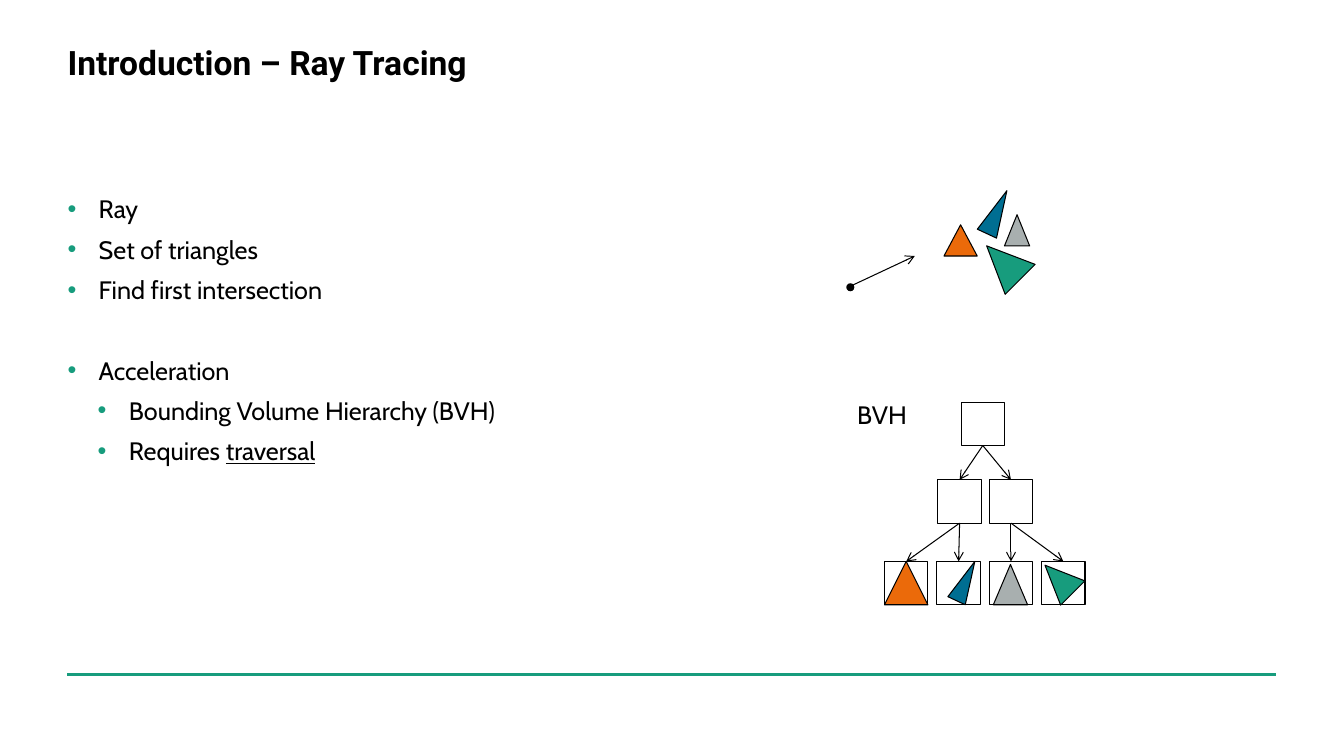
from lxml import etree
from pptx import Presentation
from pptx import util as u
from pptx.dml.color import RGBColor
from pptx.enum import shapes, text
from pptx.oxml.ns import qn

PX = 9144  # 100 px to the inch
COLORS = {
    "black": "000000",
    "green": "179C7D",
    "orange": "EB6A0A",
    "blue": "006E92",
    "gray": "A8AFAF",
}
SHAPE = shapes.MSO_SHAPE
NODE = 43

# left, top, width, height, rotation, colour
SCENE_TRIANGLES = [
    (937, 223, 33, 31, 0, "orange"),
    (979, 187, 21, 47, 25, "blue"),
    (997, 213, 25, 31, 0, "gray"),
    (975, 237, 42, 47, 315, "green"),
]
LEAF_TRIANGLES = [
    (878, 557, 43, 43, 0, "orange"),
    (949, 555, 19, 43, 25, "blue"),
    (986, 560, 34, 40, 0, "gray"),
    (1034, 555, 34, 39, 315, "green"),
]
# top and lefts of each tree level, root first
TREE_LEVELS = [
    (399, [954]),
    (476, [931, 982]),
    (557, [878 + 52 * leaf for leaf in range(4)]),
]
# wording, indent level, underlined ending, space before in points
POINTS = [
    ("Ray", 0, "", 0),
    ("Set of triangles", 0, "", 0),
    ("Find first intersection", 0, "", 0),
    ("Acceleration", 0, "", 28.8),
    ("Bounding Volume Hierarchy (BVH)", 1, "", 0),
    ("Requires ", 1, "traversal", 0),
]


def px(*lengths):
    return [u.Emu(length * PX) for length in lengths]


def rgb(name):
    return RGBColor.from_string(COLORS[name])


def write(paragraph, wording, size=18, font="Cabin", color="black", bold=False, underline=False):
    """Append one formatted run to the paragraph."""
    run = paragraph.add_run()
    run.text = wording
    run.font.size = u.Pt(size)
    run.font.name = font
    run.font.bold = bold
    run.font.underline = underline
    run.font.color.rgb = rgb(color)


def clear_margins(frame):
    frame.margin_left = frame.margin_right = frame.margin_top = frame.margin_bottom = 0


def add_title(slide, wording):
    title = slide.shapes.title
    title.left, title.top, title.width, title.height = px(67, 42, 1199, 40)
    frame = title.text_frame
    clear_margins(frame)
    frame.vertical_anchor = text.MSO_ANCHOR.TOP
    frame.paragraphs[0].alignment = text.PP_ALIGN.LEFT
    write(frame.paragraphs[0], wording, size=24, font="Roboto", bold=True)


def add_bullet(paragraph, level):
    props = paragraph._p.get_or_add_pPr()
    props.set("marL", str((31 + 30 * level) * PX))
    props.set("indent", str(-31 * PX))
    color = etree.SubElement(props, qn("a:buClr"))
    etree.SubElement(color, qn("a:srgbClr"), val=COLORS["green"])
    etree.SubElement(props, qn("a:buFont"), typeface="Arial")
    etree.SubElement(props, qn("a:buChar"), char="•")


def add_points(slide):
    frame = slide.shapes.add_textbox(*px(67, 192, 1199, 285)).text_frame
    frame.word_wrap = True
    clear_margins(frame)
    for index, (wording, level, underlined, before) in enumerate(POINTS):
        paragraph = frame.add_paragraph() if index else frame.paragraphs[0]
        paragraph.level = level
        add_bullet(paragraph, level)
        paragraph.space_after = u.Pt(7.2)
        if before:
            paragraph.space_before = u.Pt(before)
        write(paragraph, wording)
        if underlined:
            write(paragraph, underlined, underline=True)


def add_label(slide, wording, *box):
    frame = slide.shapes.add_textbox(*px(*box)).text_frame
    frame.word_wrap = False
    write(frame.paragraphs[0], wording)


def add_outlined(slide, kind, left, top, width, height, rotation=0, fill=None):
    shape = slide.shapes.add_shape(kind, *px(left, top, width, height))
    shape.shadow.inherit = False
    shape.rotation = rotation
    if fill:
        shape.fill.solid()
        shape.fill.fore_color.rgb = rgb(fill)
    else:
        shape.fill.background()
    shape.line.color.rgb = rgb("black")
    shape.line.width = u.Pt(0.75)
    return shape


def add_line(slide, *ends, color="black", width=0.75, arrow=True):
    line = slide.shapes.add_connector(shapes.MSO_CONNECTOR.STRAIGHT, *px(*ends))
    line.line.color.rgb = rgb(color)
    line.line.width = u.Pt(width)
    if arrow:
        etree.SubElement(line.line._get_or_add_ln(), qn("a:tailEnd"), type="arrow")
    etree.SubElement(line._element.spPr, qn("a:effectLst"))
    return line


def add_scene(slide):
    origin = add_outlined(slide, SHAPE.OVAL, 840, 281, 8, 8, fill="black")
    origin.line.fill.background()
    add_line(slide, 844, 284, 908, 254)
    for triangle in SCENE_TRIANGLES:
        add_outlined(slide, SHAPE.ISOSCELES_TRIANGLE, *triangle)


def add_hierarchy(slide):
    """Draw a binary tree whose node i has parent (i - 1) // 2."""
    nodes = [
        add_outlined(slide, SHAPE.RECTANGLE, left, top, NODE, NODE)
        for top, lefts in TREE_LEVELS
        for left in lefts
    ]
    for triangle in LEAF_TRIANGLES:
        add_outlined(slide, SHAPE.ISOSCELES_TRIANGLE, *triangle)
    for index, child in enumerate(nodes[1:], start=1):
        edge = add_line(slide, 0, 0, 0, 0)
        edge.begin_connect(nodes[(index - 1) // 2], 2)
        edge.end_connect(child, 0)
    add_label(slide, "BVH", 841, 391, 72, 40)


def main():
    deck = Presentation()
    deck.slide_width, deck.slide_height = px(1334, 750)
    slide = deck.slides.add_slide(deck.slide_layouts.get_by_name("Title Only"))
    add_line(slide, 67, 669, 1267, 669, color="green", width=2.5, arrow=False)
    add_title(slide, "Introduction – Ray Tracing")
    add_points(slide)
    add_scene(slide)
    add_hierarchy(slide)
    deck.save("out.pptx")


if __name__ == "__main__":
    main()
